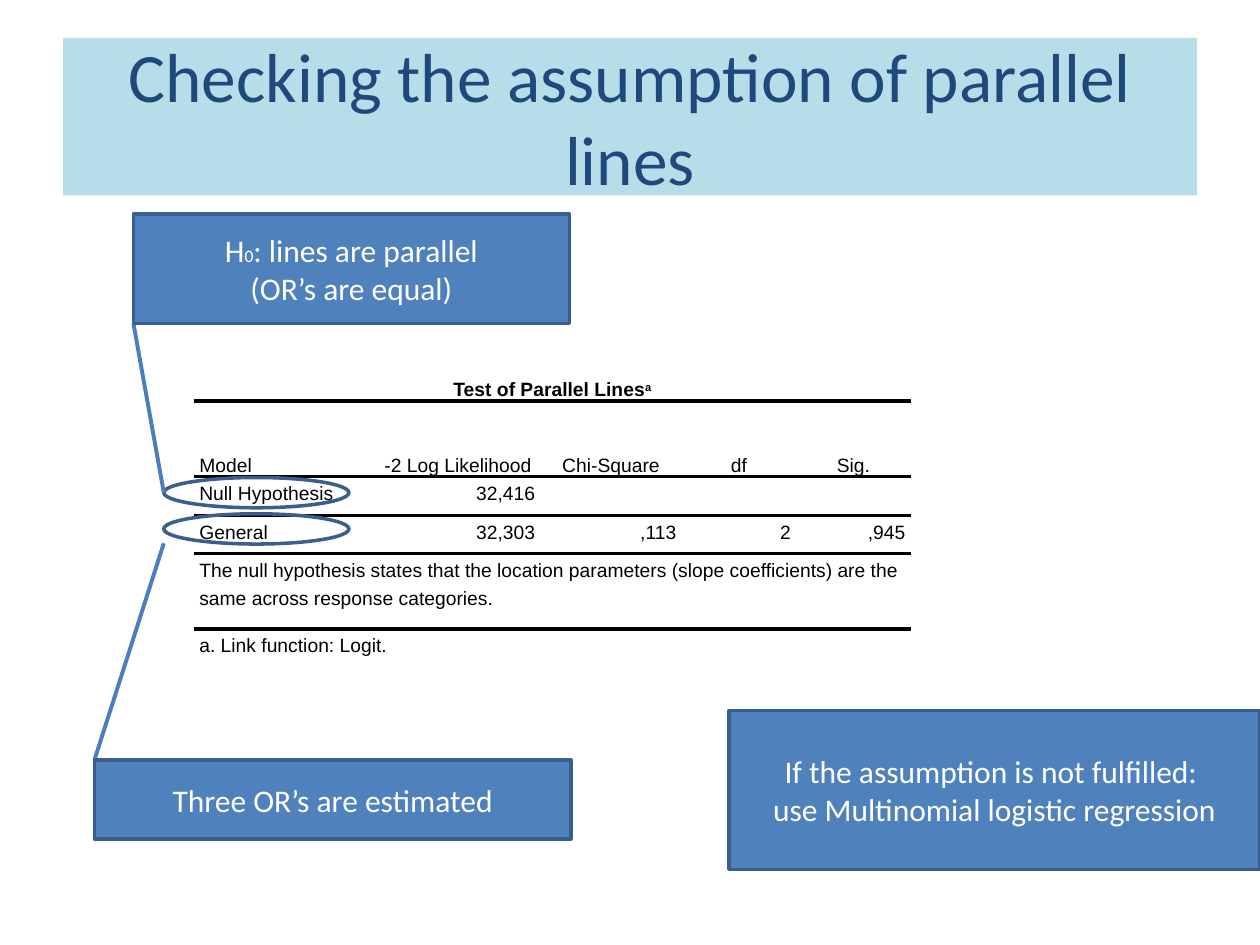
from lxml.etree import SubElement as Sub
from pptx import Presentation
from pptx.dml.color import RGBColor
from pptx.enum.shapes import MSO_CONNECTOR as Conn, MSO_SHAPE as Shape
from pptx.enum.text import MSO_ANCHOR as Anchor, MSO_AUTO_SIZE as Fit, PP_ALIGN as Align
from pptx.oxml.ns import qn
from pptx.util import Pt

WHITE = RGBColor(0xFF, 0xFF, 0xFF)
BLACK = RGBColor(0, 0, 0)
NAVY = RGBColor(0x1F, 0x49, 0x7D)
PALE = RGBColor(0xB7, 0xDE, 0xE8)
BLUE = RGBColor(0x4F, 0x81, 0xBD)
EDGE = RGBColor(0x3A, 0x5F, 0x8C)
LINK = RGBColor(0x4B, 0x7E, 0xBC)

PLAIN = "{2D5ABB26-0587-4C30-8999-92F81FD0307C}"  # table style without grid
COLS = [103.7, 94.3, 80.6, 65.5, 65.5]
ROWS = [16, 43.2, 22.3, 21.6, 43.2, 21.6]
RULED = (0, 1, 3)  # rows with a rule below
DATA = [
    ["Test of Parallel Lines"],
    ["Model", "-2 Log Likelihood", "Chi-Square", "df", "Sig."],
    ["Null Hypothesis", "32,416", "", "", ""],
    ["General", "32,303", ",113", "2", ",945"],
    ["The null hypothesis states that the location parameters (slope "
     "coefficients) are the same across response categories."],
    ["a. Link function: Logit."],
]


def add_run(par, text, size, font, color):
    run = par.add_run()
    run.text = text
    run.font.size = Pt(size)
    run.font.name = font
    run.font.color.rgb = color
    return run


def add_title(slide, text):
    title = slide.shapes.title
    title.left, title.top, title.width, title.height = map(Pt, (36, 21.6, 648, 90))
    title.fill.solid()
    title.fill.fore_color.rgb = PALE
    frame = title.text_frame
    frame.auto_size = Fit.NONE
    frame.vertical_anchor = Anchor.MIDDLE
    par = frame.paragraphs[0]
    par.alignment = Align.CENTER
    add_run(par, text, 39.6, "Calibri", NAVY)


def add_form(slide, kind, box, fill=None, line=None):
    form = slide.shapes.add_shape(kind, *map(Pt, box))
    form.shadow.inherit = False
    if fill is None:
        form.fill.background()
    else:
        form.fill.solid()
        form.fill.fore_color.rgb = fill
    if line is None:
        form.line.fill.background()
    else:
        form.line.color.rgb = line
        form.line.width = Pt(2)
    return form


def add_note(slide, box, lines):
    """Blue box; each line is a list of (text, size) runs."""
    frame = add_form(slide, Shape.RECTANGLE, box, BLUE, EDGE).text_frame
    frame.word_wrap = True
    frame.vertical_anchor = Anchor.MIDDLE
    for i, runs in enumerate(lines):
        par = frame.add_paragraph() if i else frame.paragraphs[0]
        par.alignment = Align.CENTER
        for text, size in runs:
            add_run(par, text, size, "Calibri", WHITE)


def add_link(slide, start, end):
    link = slide.shapes.add_connector(Conn.STRAIGHT, *map(Pt, start + end))
    link.line.color.rgb = LINK
    link.line.width = Pt(2.25)
    Sub(link._element.spPr, qn("a:effectLst"))


def add_rule(cell, side):
    rule = Sub(cell._tc.get_or_add_tcPr(), qn("a:" + side), w=str(Pt(2.25)))
    fill = Sub(rule, qn("a:solidFill"))
    Sub(fill, qn("a:srgbClr"), val=str(BLACK))


def fill_cell(cell, text, row, col):
    # Rules come before the fill in the cell's XML
    if row - 1 in RULED:
        add_rule(cell, "lnT")
    if row in RULED:
        add_rule(cell, "lnB")
    cell.fill.solid()
    cell.fill.fore_color.rgb = WHITE
    cell.margin_left = cell.margin_right = cell.margin_top = cell.margin_bottom = 0
    cell.vertical_anchor = {0: Anchor.MIDDLE, 1: Anchor.BOTTOM}.get(row, Anchor.TOP)
    par = cell.text_frame.paragraphs[0]
    par.line_spacing = Pt(16)
    par.font.size = Pt(11)
    if row == 0 or (row == 1 and col):
        par.alignment = Align.CENTER
    elif col:
        par.alignment = Align.RIGHT
    props = par._p.get_or_add_pPr()
    for key in ("marL", "marR"):
        props.set(key, str(Pt(3)))
    if text:
        run = add_run(par, text, 11, "Arial", BLACK)
        run.font.bold = row == 0
    return par


def add_grid(slide):
    frame = slide.shapes.add_table(len(ROWS), len(COLS), Pt(110.9), Pt(213.1),
                                   Pt(sum(COLS)), Pt(sum(ROWS)))
    grid = frame.table
    grid.first_row = grid.horz_banding = False
    grid._tbl.tblPr.find(qn("a:tableStyleId")).text = PLAIN
    for col, width in zip(grid.columns, COLS):
        col.width = Pt(width)
    for r, texts in enumerate(DATA):
        grid.rows[r].height = Pt(ROWS[r])
        if len(texts) == 1:
            grid.cell(r, 0).merge(grid.cell(r, len(COLS) - 1))
        for c in range(len(COLS)):
            fill_cell(grid.cell(r, c), texts[c] if c < len(texts) else "", r, c)
    # Footnote mark in the heading
    mark = add_run(grid.cell(0, 0).text_frame.paragraphs[0], "a", 11, "Arial", BLACK)
    mark.font.bold = True
    mark.font._element.set("baseline", "30000")


def main():
    deck = Presentation()
    deck.slide_width, deck.slide_height = Pt(720), Pt(540)
    slide = deck.slides.add_slide(deck.slide_layouts[5])

    add_title(slide, "Checking the assumption of parallel lines")

    # Test output on a white panel
    add_form(slide, Shape.RECTANGLE, (31, 128.2, 657.4, 380.2), WHITE)
    add_grid(slide)

    # Null hypothesis: ring, link and note
    add_form(slide, Shape.OVAL, (93.6, 272.9, 105.8, 17.3), line=EDGE)
    add_link(slide, (93.6, 281.5), (76.3, 185))
    add_note(slide, (76.3, 122.4, 249.1, 62.6),
             [[("H", 18), ("0", 10), (": lines are parallel", 18)],
              [("(OR’s are equal)", 18)]])

    # General model: ring, link and note
    add_form(slide, Shape.OVAL, (93.6, 293.6, 105.8, 17.3), line=EDGE)
    add_link(slide, (93.6, 310.5), (54, 434.2))
    add_note(slide, (54, 434.2, 272.2, 45.4), [[("Three OR’s are estimated", 18)]])

    # What to do otherwise
    add_note(slide, (416.6, 406.1, 303.4, 90.7),
             [[("If the assumption is not fulfilled: ", 18)],
              [("use Multinomial logistic regression", 18)]])

    deck.save("out.pptx")


if __name__ == "__main__":
    main()
